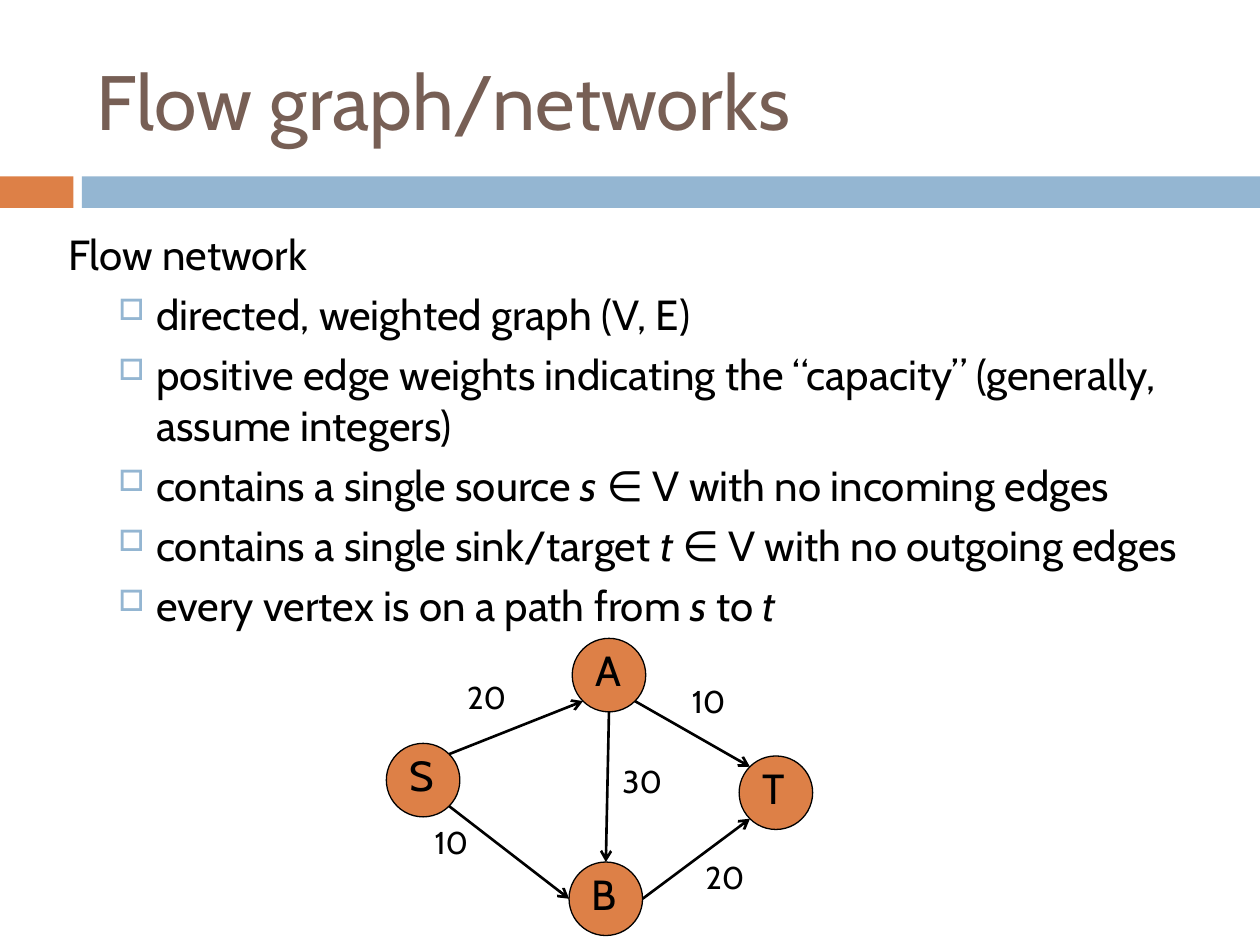
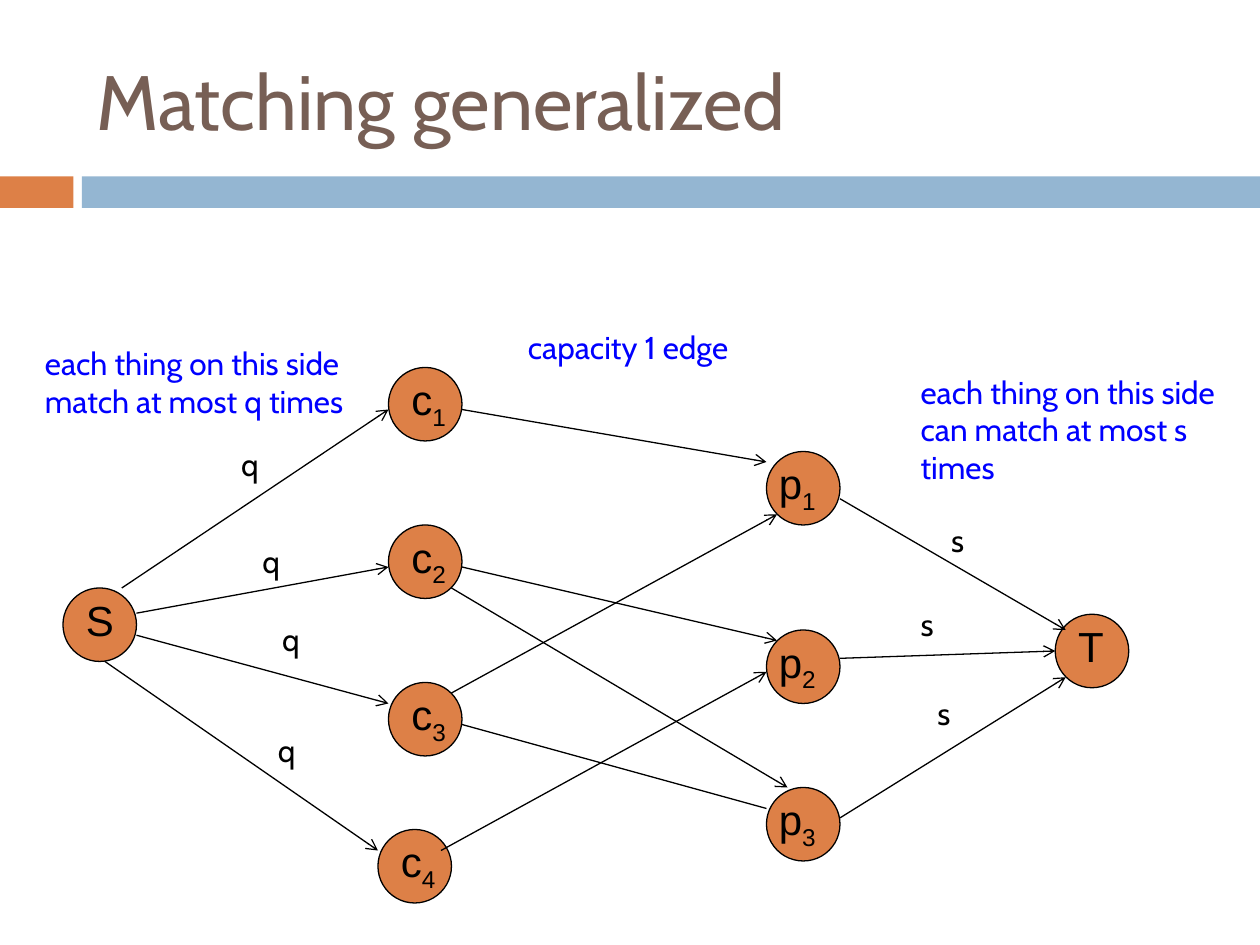
from pptx import Presentation
from pptx.dml.color import RGBColor
from pptx.enum.shapes import MSO_CONNECTOR, MSO_SHAPE
from pptx.enum.text import MSO_ANCHOR, MSO_AUTO_SIZE, PP_ALIGN
from pptx.oxml.ns import qn
from pptx.util import Inches, Pt
from lxml import etree

RECT, OVAL = MSO_SHAPE.RECTANGLE, MSO_SHAPE.OVAL
LINE = MSO_CONNECTOR.STRAIGHT
MIDDLE, LEFT, NO_FIT = MSO_ANCHOR.MIDDLE, PP_ALIGN.LEFT, MSO_AUTO_SIZE.NONE

ORANGE = RGBColor(0xDD, 0x80, 0x47)
SKY = RGBColor(0x94, 0xB6, 0xD2)
BROWN = RGBColor(0x77, 0x5F, 0x55)
BLACK = RGBColor(0, 0, 0)
BLUE = RGBColor(0, 0, 0xFF)

SANS, PLAIN = "Cabin", "Arial"
CELL = Inches(1) / 12  # grid step; the slide is 120 by 90 cells
NODE = 7               # width of a node in cells
DIAG = 0.354 * NODE    # offset of a rim point at 45 degrees


def cells(*sizes):
    return [round(size * CELL) for size in sizes]


def style(para, size, color, face=SANS):
    font = para.font
    font.size, font.name = Pt(size), face
    font.color.rgb = color


def slant(run):
    run.font.italic = True


def lower(run):
    """Turn the run into a subscript."""
    run.font._element.set("baseline", "-25000")


def fill_runs(para, text, mark=slant):
    """Split text at each bar and mark every second part."""
    for i, part in enumerate(text.split("|")):
        if part:
            run = para.add_run()
            run.text = part
            if i % 2:
                mark(run)


def add_text(shapes, box, text, size=18, color=BLACK, face=SANS, mark=slant):
    frame = shapes.add_textbox(*cells(*box)).text_frame
    frame.word_wrap = True
    para = frame.paragraphs[0]
    fill_runs(para, text, mark)
    style(para, size, color, face)
    return frame


def add_shape(shapes, kind, box, color):
    shape = shapes.add_shape(kind, *cells(*box))
    shape.shadow.inherit = False
    shape.fill.solid()
    shape.fill.fore_color.rgb = color
    shape.line.fill.background()
    return shape


def add_slide(deck, text):
    slide = deck.slides.add_slide(deck.slide_layouts[5])
    add_shape(slide.shapes, RECT, (0, 16.8, 7, 3), ORANGE)
    add_shape(slide.shapes, RECT, (7.8, 16.8, 112.2, 3), SKY)
    title = slide.shapes.title
    title.left, title.top, title.width, title.height = cells(8, 3, 107, 13)
    frame = title.text_frame
    frame.text = text
    frame.auto_size, frame.vertical_anchor = NO_FIT, MIDDLE
    para = frame.paragraphs[0]
    para.alignment = LEFT
    style(para, 44, BROWN)
    return slide


def add_node(slide, spot, text, face, shift=1):
    """Group a circle with its label, set in by shift cells."""
    x, y = spot
    shapes = slide.shapes.add_group_shape().shapes
    disc = add_shape(shapes, OVAL, (x, y, NODE, NODE), ORANGE)
    disc.line.color.rgb, disc.line.width = BLACK, Pt(0.75)
    box = (x + shift, y, NODE - shift, 6)
    add_text(shapes, box, text, 24, face=face, mark=lower)


def add_edge(slide, start, end, width=0.75, arrow=True):
    edge = slide.shapes.add_connector(LINE, *cells(*start, *end))
    edge.line.color.rgb, edge.line.width = BLACK, Pt(width)
    if arrow:
        etree.SubElement(edge.line._get_or_add_ln(), qn("a:tailEnd"), type="arrow")
    etree.SubElement(edge._element.spPr, qn("a:effectLst"))


def rim(spot, side):
    """Point on a node's rim, by compass side such as N or SE."""
    reach = DIAG if len(side) == 2 else NODE / 2
    across = ("E" in side) - ("W" in side)
    down = ("S" in side) - ("N" in side)
    return spot[0] + NODE / 2 + reach * across, spot[1] + NODE / 2 + reach * down


def add_bullet(para):
    props = para._p.get_or_add_pPr()
    props.set("marL", str(Inches(0.7)))
    props.set("indent", str(-Inches(0.3)))
    tint = etree.Element(qn("a:buClr"))
    etree.SubElement(tint, qn("a:srgbClr"), val=str(SKY))
    size = etree.Element(qn("a:buSzPct"), val="70000")
    sign = etree.Element(qn("a:buChar"), char="□")
    font = props.find(qn("a:defRPr"))
    for item in (tint, size, sign):
        font.addprevious(item)


def add_list(slide, box, head, items):
    frame = add_text(slide.shapes, box, head, 24)
    frame.paragraphs[0].space_before = Pt(7)
    for item in items:
        para = frame.add_paragraph()
        para.level, para.space_before = 1, Pt(5.5)
        fill_runs(para, item)
        style(para, 24, BLACK)
        add_bullet(para)


def draw_flow(deck):
    slide = add_slide(deck, "Flow graph/networks")
    nodes = {"S": (36.8, 70.8), "A": (54.5, 60.8),
             "B": (54.2, 82.1), "T": (70.4, 72)}
    for name, spot in nodes.items():
        add_node(slide, spot, name, SANS)
    for tail, out, head, into in (("S", "NE", "A", "SW"), ("S", "SE", "B", "W"),
                                  ("B", "E", "T", "SW"), ("A", "S", "B", "N"),
                                  ("A", "SE", "T", "NW")):
        add_edge(slide, rim(nodes[tail], out), rim(nodes[head], into), 1.5)
    for text, x, y in (("20", 43.3, 64), ("20", 66, 81.1), ("10", 40.2, 77.8),
                       ("10", 64.7, 64.4), ("30", 58.1, 72)):
        add_text(slide.shapes, (x, y, 9, 4.8), text)
    add_list(slide, (5.3, 21.2, 113.4, 32), "Flow network", (
        "directed, weighted graph (V, E)",
        "positive edge weights indicating the “capacity” (generally, assume integers)",
        "contains a single source |s |∈ V with no incoming edges",
        "contains a single sink/target |t |∈ V with no outgoing edges",
        "every vertex is on a path from |s| to |t|"))


def draw_match(deck):
    slide = add_slide(deck, "Matching generalized")
    for i, spot in enumerate(((37, 35), (37, 50), (37, 65), (36, 79)), 1):
        add_node(slide, spot, f"c|{i}|", PLAIN)
    for i, y in enumerate((43, 60, 75), 1):
        add_node(slide, (73, y), f"p|{i}|", PLAIN, 0)
    add_node(slide, (6, 56), "S", PLAIN)
    add_node(slide, (100.5, 58.5), "T", PLAIN)

    pairs = (((42, 81), (73, 64)), ((43, 66), (74, 49)), ((44, 54), (74, 61)),
             ((44, 39), (73, 44)), ((43, 56), (75, 75)))
    source = (((11.6, 56), (37, 39)), ((13, 58.4), (37, 54)),
              ((13, 60.5), (37, 67)), ((10, 63), (36, 81)))
    sink = (((80, 47.5), (101.5, 60)), ((80, 62.7), (100.5, 62)),
            ((80, 77.9), (101.5, 64.5)))
    for start, end in pairs + source + sink:
        add_edge(slide, start, end)
    add_edge(slide, (44, 69), (73, 77), arrow=False)

    for text, spots in (
            ("q", ((21.8, 41.8), (23.8, 51), (25.7, 58.5), (25.3, 69))),
            ("s", ((89.4, 49), (86.5, 57), (88.1, 65.5)))):
        for x, y in spots:
            add_text(slide.shapes, (x, y, 7, 4.8), text)
    for text, x, y, high in (
            ("each thing on this side match at most q times", 3.1, 32.2, 8.5),
            ("capacity 1 edge", 49.1, 30.7, 4.8),
            ("each thing on this side can match at most s times", 86.5, 34.9, 8.5)):
        add_text(slide.shapes, (x, y, 33.8, high), text, color=BLUE)


def main():
    deck = Presentation()
    deck.slide_width, deck.slide_height = Inches(10), Inches(7.5)
    draw_flow(deck)
    draw_match(deck)
    deck.save("out.pptx")


if __name__ == "__main__":
    main()
